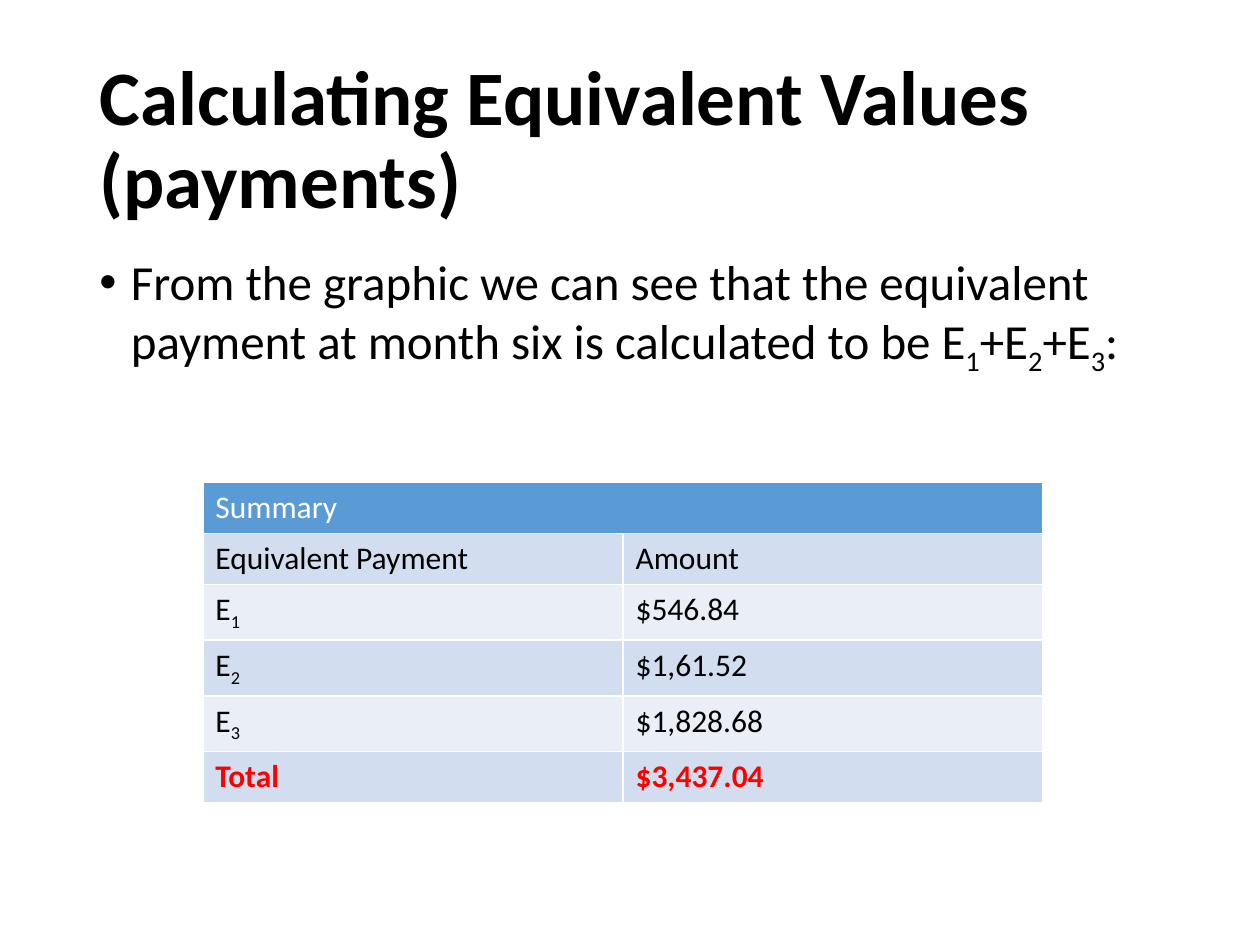
from typing import NamedTuple

from lxml.etree import SubElement
from pptx import Presentation
from pptx.dml.color import RGBColor
from pptx.enum.text import MSO_ANCHOR as Anchor, MSO_AUTO_SIZE as AutoSize, PP_ALIGN as Align
from pptx.oxml.ns import qn
from pptx.util import Inches, Pt

BLACK = RGBColor(0x00, 0x00, 0x00)
WHITE = RGBColor(0xFF, 0xFF, 0xFF)
RED = RGBColor(0xFF, 0x00, 0x00)
HEADER_BLUE = RGBColor(0x5B, 0x9B, 0xD5)
BAND_DARK = RGBColor(0xD2, 0xDE, 0xEF)
BAND_LIGHT = RGBColor(0xEA, 0xEF, 0xF7)
FONT = "Calibri"


class Piece(NamedTuple):
    text: str
    subscript: bool = False


class SummaryRow(NamedTuple):
    label: list[Piece]
    amount: list[Piece]
    color: RGBColor = BLACK
    bold: bool = False


def payment(number: int) -> list[Piece]:
    return [Piece("E"), Piece(str(number), True)]


SUMMARY = [
    SummaryRow([Piece("Summary")], [], WHITE),
    SummaryRow([Piece("Equivalent Payment")], [Piece("Amount")]),
    SummaryRow(payment(1), [Piece("$546.84")]),
    SummaryRow(payment(2), [Piece("$1,61.52")]),
    SummaryRow(payment(3), [Piece("$1,828.68")]),
    SummaryRow([Piece("Total")], [Piece("$3,437.04")], RED, True),
]
EXPLANATION = [
    Piece("From the graphic we can see that the equivalent payment at month six is calculated to be "),
    *payment(1), Piece("+"), *payment(2), Piece("+"), *payment(3), Piece(":"),
]


def write(paragraph, pieces: list[Piece], size: int, color: RGBColor = BLACK, bold: bool = False) -> None:
    font = paragraph.font
    font.name, font.size, font.bold = FONT, Pt(size), bold
    font.color.rgb = color
    paragraph.alignment = Align.LEFT
    for piece in pieces:
        run = paragraph.add_run()
        run.text = piece.text
        if piece.subscript:
            run._r.get_or_add_rPr().set("baseline", "-25000")


def add_bullet(paragraph, indent: int) -> None:
    properties = paragraph._p.get_or_add_pPr()
    properties.set("marL", str(indent))
    properties.set("indent", str(-indent))
    bullet_font = SubElement(properties, qn("a:buFont"))
    bullet_font.set("typeface", "Arial")
    bullet = SubElement(properties, qn("a:buChar"))
    bullet.set("char", "•")
    default_run = properties.find(qn("a:defRPr"))
    if default_run is not None:
        properties.append(default_run)


def add_borders(cell, color: RGBColor, width: int) -> None:
    properties = cell._tc.get_or_add_tcPr()
    for side in ("lnL", "lnR", "lnT", "lnB"):
        line = SubElement(properties, qn(f"a:{side}"))
        line.set("w", str(width))
        fill = SubElement(line, qn("a:solidFill"))
        SubElement(fill, qn("a:srgbClr")).set("val", str(color))


def add_title(slide) -> None:
    title = slide.shapes.title
    title.left, title.top = Inches(0.69), Inches(0.4)
    title.width, title.height = Inches(8.62), Inches(1.45)
    frame = title.text_frame
    frame.word_wrap = True
    frame.auto_size = AutoSize.NONE
    frame.vertical_anchor = Anchor.MIDDLE
    paragraph = frame.paragraphs[0]
    paragraph.line_spacing = 0.9
    write(paragraph, [Piece("Calculating Equivalent Values (payments)")], 44, bold=True)


def add_explanation(slide) -> None:
    body = slide.shapes.add_textbox(Inches(0.69), Inches(2), Inches(8.62), Inches(4.76))
    body.text_frame.word_wrap = True
    paragraph = body.text_frame.paragraphs[0]
    paragraph.line_spacing = 0.9
    paragraph.space_before = Pt(10)
    write(paragraph, EXPLANATION, 28)
    add_bullet(paragraph, Inches(0.25))


def add_summary(slide) -> None:
    table = slide.shapes.add_table(
        len(SUMMARY), 2, Inches(1.61), Inches(3.83), Inches(6.67), Inches(2.43)
    ).table
    table.first_row = table.horz_banding = False
    table.cell(0, 0).merge(table.cell(0, 1))
    for index, row in enumerate(SUMMARY):
        band = BAND_DARK if index % 2 else BAND_LIGHT
        for column, pieces in enumerate((row.label, row.amount)):
            cell = table.cell(index, column)
            add_borders(cell, WHITE, Pt(1))
            cell.fill.solid()
            cell.fill.fore_color.rgb = band if index else HEADER_BLUE
            write(cell.text_frame.paragraphs[0], pieces, 18, row.color, row.bold)


def main() -> None:
    presentation = Presentation()
    presentation.slide_width, presentation.slide_height = Inches(10), Inches(7.5)
    slide = presentation.slides.add_slide(presentation.slide_layouts[5])
    add_title(slide)
    add_explanation(slide)
    add_summary(slide)
    presentation.save("out.pptx")


if __name__ == "__main__":
    main()
